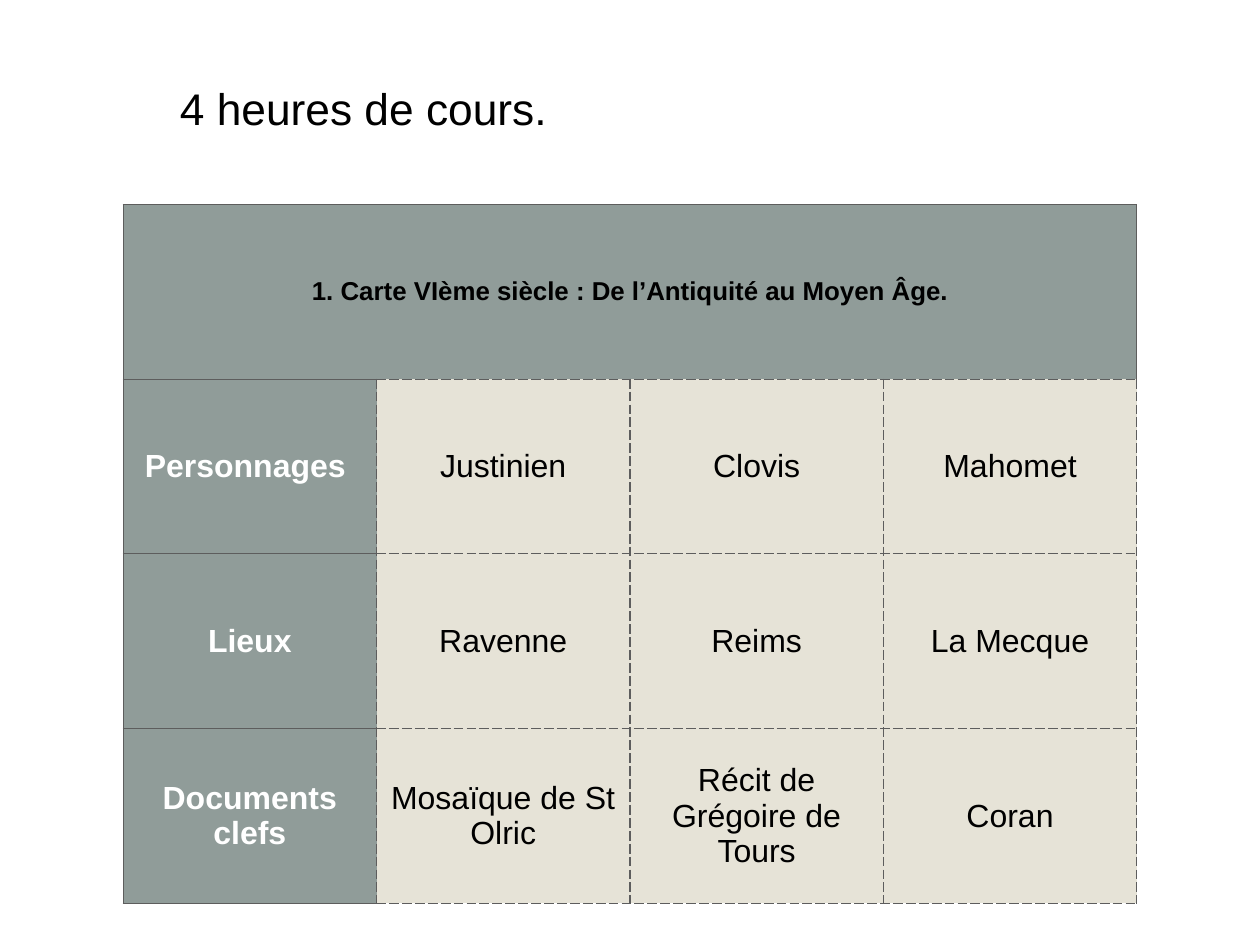
import dataclasses

import lxml.etree
import pptx
import pptx.dml.color
import pptx.enum.text
import pptx.oxml.ns
import pptx.util


@dataclasses.dataclass(frozen=True)
class Theme:
    """Colours, font and sizes used on the slide."""
    font: str = "Arial"
    black: str = "000000"
    white: str = "FFFFFF"
    heading_fill: str = "909C99"
    body_fill: str = "E6E3D7"
    border: str = "5D5D5D"
    title_size: int = 36
    banner_size: int = 21
    cell_size: int = 26
    border_width: int = 1
    margin: float = 0.06


THEME = Theme()
TITLE = "4 heures de cours."
BANNER = "1. Carte VIème siècle : De l’Antiquité au Moyen Âge."
ROWS = [
    ["Personnages ", "Justinien", "Clovis", "Mahomet"],
    ["Lieux", "Ravenne", "Reims", "La Mecque"],
    ["Documents clefs", "Mosaïque de St Olric", "Récit de Grégoire de Tours", "Coran"],
]


def set_margins(target):
    """Give a text frame or a cell the same margin on every side."""
    for side in ("left", "top", "right", "bottom"):
        setattr(target, f"margin_{side}", pptx.util.Inches(THEME.margin))


def write_text(text_frame, text, size, color, bold, alignment):
    """Set one paragraph of text and format its run."""
    text_frame.text = text
    text_frame.word_wrap = True
    paragraph = text_frame.paragraphs[0]
    paragraph.alignment = alignment
    font = paragraph.runs[0].font
    font.name = THEME.font
    font.size = pptx.util.Pt(size)
    font.bold = bold
    font.color.rgb = pptx.dml.color.RGBColor.from_string(color)


def draw_borders(cell, dash):
    """Outline a cell on its four sides with the given dash style."""
    qualify = pptx.oxml.ns.qn
    properties = cell._tc.get_or_add_tcPr()
    for side in ("L", "R", "T", "B"):
        line = lxml.etree.SubElement(properties, qualify(f"a:ln{side}"))
        line.set("w", str(pptx.util.Pt(THEME.border_width)))
        fill = lxml.etree.SubElement(line, qualify("a:solidFill"))
        lxml.etree.SubElement(fill, qualify("a:srgbClr")).set("val", THEME.border)
        lxml.etree.SubElement(line, qualify("a:prstDash")).set("val", dash)


def style_cell(cell, fill, dash):
    """Set the borders, fill, margins and anchor of a cell."""
    draw_borders(cell, dash)
    cell.fill.solid()
    cell.fill.fore_color.rgb = pptx.dml.color.RGBColor.from_string(fill)
    cell.vertical_anchor = pptx.enum.text.MSO_ANCHOR.MIDDLE
    set_margins(cell)


def add_title(slide, left, top, width, height):
    """Place and format the title placeholder."""
    title = slide.shapes.title
    title.left, title.top, title.width, title.height = map(
        pptx.util.Inches, (left, top, width, height))
    text_frame = title.text_frame
    write_text(text_frame, TITLE, THEME.title_size, THEME.black, False,
               pptx.enum.text.PP_ALIGN.LEFT)
    text_frame.vertical_anchor = pptx.enum.text.MSO_ANCHOR.MIDDLE
    text_frame.auto_size = pptx.enum.text.MSO_AUTO_SIZE.NONE
    set_margins(text_frame)


def add_course_table(slide, left, top, width, height):
    """Add the table with a merged banner row and a heading column."""
    center = pptx.enum.text.PP_ALIGN.CENTER
    column_count = len(ROWS[0])
    table = slide.shapes.add_table(
        len(ROWS) + 1, column_count,
        *map(pptx.util.Inches, (left, top, width, height))).table
    for column in range(column_count):
        style_cell(table.cell(0, column), THEME.heading_fill, "solid")
    banner = table.cell(0, 0)
    banner.merge(table.cell(0, column_count - 1))
    write_text(banner.text_frame, BANNER, THEME.banner_size, THEME.black, True, center)
    for row, texts in enumerate(ROWS, start=1):
        for column, text in enumerate(texts):
            cell = table.cell(row, column)
            heading = column == 0
            style_cell(cell, THEME.heading_fill if heading else THEME.body_fill,
                       "solid" if heading else "lgDash")
            write_text(cell.text_frame, text, THEME.cell_size,
                       THEME.white if heading else THEME.black, heading, center)


def main():
    """Build the slide and save the presentation."""
    presentation = pptx.Presentation()
    presentation.slide_width = pptx.util.Inches(14.22)
    presentation.slide_height = pptx.util.Inches(10.67)
    slide = presentation.slides.add_slide(presentation.slide_layouts.get_by_name("Title Only"))
    add_title(slide, 1.97, 0.86, 8.64, 0.71)
    add_course_table(slide, 1.39, 2.31, 11.44, 7.89)
    presentation.save("out.pptx")


if __name__ == "__main__":
    main()
